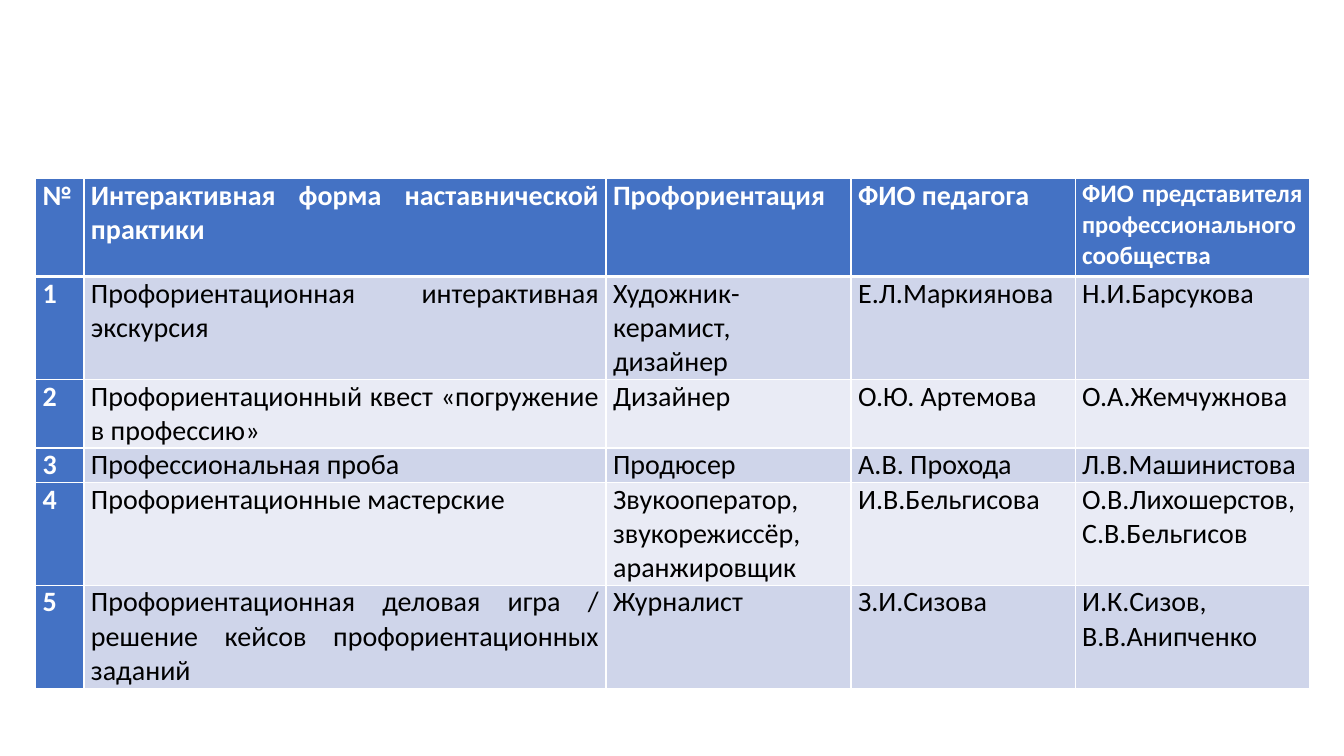
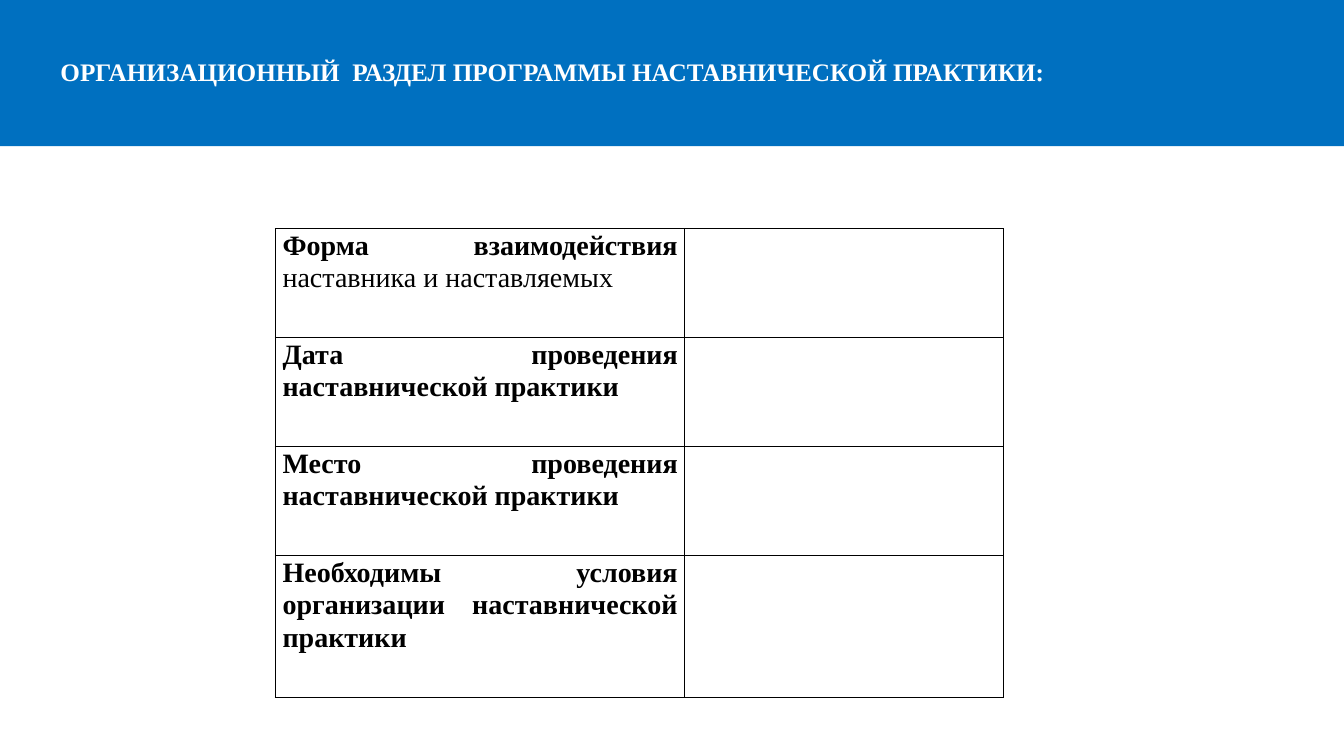
import dataclasses
import typing

import pptx
import pptx.dml.color
import pptx.enum.shapes
import pptx.enum.text
import pptx.oxml
import pptx.oxml.ns
import pptx.util

ALIGN = pptx.enum.text.PP_ALIGN
ANCHOR = pptx.enum.text.MSO_ANCHOR


@dataclasses.dataclass(frozen=True)
class Theme:
    white: str = "FFFFFF"
    black: str = "000000"
    blue: str = "4472C4"
    band_blue: str = "0070C0"
    stripes: tuple[str, str] = ("CFD5EA", "E9EBF5")
    sans: str = "Calibri"
    serif: str = "Times New Roman"
    body: float = 20
    small: float = 18
    tight: float = 17.5
    rule: float = 1
    heavy_rule: float = 3


@dataclasses.dataclass(frozen=True)
class Run:
    """A piece of text; None means the format of its cell."""
    text: str
    size: float | None = None
    bold: bool | None = None


@dataclasses.dataclass(frozen=True)
class Grid:
    """A table's place, in percent of the slide's width and height."""
    left: float
    top: float
    cols: tuple[float, ...]
    rows: tuple[float, ...]


# A cell holds lines of text, each a string or a tuple of runs
Line = str | tuple[Run, ...]
Cell = tuple[Line, ...]

THEME = Theme()
WIDTH = pptx.util.Inches(13.33)
HEIGHT = pptx.util.Inches(7.5)


def across(percent: float) -> int:
    return round(WIDTH * percent / 100)


def down(percent: float) -> int:
    return round(HEIGHT * percent / 100)


def rgb(color: str) -> pptx.dml.color.RGBColor:
    return pptx.dml.color.RGBColor.from_string(color)


def write(tf: typing.Any, lines: Cell, *, font: str, color: str, size: float,
          bold: bool = False, align: typing.Any = ALIGN.LEFT,
          spacing: float = 1.0, after: float = 0) -> None:
    for i, line in enumerate(lines):
        p = tf.add_paragraph() if i else tf.paragraphs[0]
        p.alignment, p.line_spacing = align, spacing
        p.space_after = pptx.util.Pt(after)
        for run in (Run(line),) if isinstance(line, str) else line:
            r = p.add_run()
            r.text = run.text
            r.font.name = font
            r.font.size = pptx.util.Pt(run.size or size)
            r.font.bold = bold if run.bold is None else run.bold
            r.font.color.rgb = rgb(color)


def set_borders(cell: typing.Any, color: str, top: float, bottom: float) -> None:
    sides = {"L": THEME.rule, "R": THEME.rule, "T": top, "B": bottom}
    props = cell._tc.get_or_add_tcPr()
    for i, (side, width) in enumerate(sides.items()):
        props.insert(i, pptx.oxml.parse_xml(
            f'<a:ln{side} {pptx.oxml.ns.nsdecls("a")} w="{pptx.util.Pt(width)}">'
            f'<a:solidFill><a:srgbClr val="{color}"/></a:solidFill></a:ln{side}>'))


def add_grid(s: typing.Any, grid: Grid) -> typing.Any:
    """Add an unstyled table with the grid's columns and rows."""
    table = s.shapes.add_table(
        len(grid.rows), len(grid.cols), across(grid.left), down(grid.top),
        across(sum(grid.cols)), down(sum(grid.rows))).table
    table.first_row = table.horz_banding = False
    for column, share in zip(table.columns, grid.cols):
        column.width = across(share)
    for row, share in zip(table.rows, grid.rows):
        row.height = down(share)
    return table


def fill_cell(cell: typing.Any, lines: Cell, *, fill: str | None, border: str,
              top: float = THEME.rule, bottom: float = THEME.rule,
              **text_format: typing.Any) -> None:
    cell.margin_left = cell.margin_right = pptx.util.Inches(0.07)
    cell.margin_top = cell.margin_bottom = 0
    if fill:
        cell.fill.solid()
        cell.fill.fore_color.rgb = rgb(fill)
    else:
        cell.fill.background()
    set_borders(cell, border, top, bottom)
    write(cell.text_frame, lines, align=ALIGN.JUSTIFY, size=THEME.body, **text_format)


def add_title_band(s: typing.Any, text: str) -> None:
    sp = s.shapes.add_shape(pptx.enum.shapes.MSO_SHAPE.RECTANGLE,
                            0, 0, WIDTH, down(19.33))
    sp.shadow.inherit = False
    sp.fill.solid()
    sp.fill.fore_color.rgb = rgb(THEME.band_blue)
    sp.line.fill.background()
    tf = sp.text_frame
    tf.word_wrap = True
    tf.vertical_anchor = ANCHOR.MIDDLE
    tf.margin_left = across(4.5)
    write(tf, (text,), font=THEME.serif, color=THEME.white, size=THEME.small,
          bold=True, spacing=0.9)


# Slide 1: forms of mentoring practice
PRACTICE_GRID = Grid(2.65, 23.65, (3.6, 38.85, 18.23, 16.67, 17.45),
                     (12.93, 13.6, 9.07, 4.53, 13.6, 13.6))
PRACTICE_HEADER: tuple[Cell, ...] = (
    ("№",),
    ("Интерактивная форма наставнической практики",),
    ("Профориентация",),
    ("ФИО педагога",),
    ((Run("ФИО представителя ", THEME.small),
      Run("профессионального", THEME.tight),
      Run(" сообщества", THEME.small)),),
)
PRACTICES: tuple[tuple[Cell, ...], ...] = (
    (("Профориентационная интерактивная экскурсия",),
     ("Художник-керамист, дизайнер",), ("Е.Л.Маркиянова",), ("Н.И.Барсукова",)),
    (("Профориентационный квест «погружение в профессию»",),
     ("Дизайнер",), ("О.Ю. Артемова",), ("О.А.Жемчужнова",)),
    (("Профессиональная проба",),
     ("Продюсер",), ("А.В. Прохода",), ("Л.В.Машинистова",)),
    (("Профориентационные мастерские",),
     ("Звукооператор, звукорежиссёр, аранжировщик",), ("И.В.Бельгисова",),
     ("О.В.Лихошерстов,", "С.В.Бельгисов")),
    (("Профориентационная деловая игра / решение кейсов "
      "профориентационных заданий",),
     ("Журналист",), ("З.И.Сизова",), ("И.К.Сизов, В.В.Анипченко",)),
)


def build_practices(s: typing.Any) -> None:
    table = add_grid(s, PRACTICE_GRID)
    numbered = [((str(n),), *row) for n, row in enumerate(PRACTICES, 1)]
    for i, row in enumerate([PRACTICE_HEADER, *numbered]):
        for j, lines in enumerate(row):
            heading = i == 0 or j == 0
            fill_cell(table.cell(i, j), lines,
                      fill=THEME.blue if heading else THEME.stripes[(i - 1) % 2],
                      border=THEME.white,
                      top=THEME.heavy_rule if i == 1 else THEME.rule,
                      bottom=THEME.heavy_rule if i == 0 else THEME.rule,
                      font=THEME.sans, bold=heading,
                      color=THEME.white if heading else THEME.black)


# Slide 2: organisational section, with an empty column to fill in
SECTION_TITLE = "ОРГАНИЗАЦИОННЫЙ  РАЗДЕЛ ПРОГРАММЫ НАСТАВНИЧЕСКОЙ ПРАКТИКИ:"
SECTION_GRID = Grid(20.5, 30.25, (30.45, 23.7), (14.42, 14.42, 14.42, 18.8))
SECTION_ITEMS: tuple[Line, ...] = (
    (Run("Форма взаимодействия "), Run("наставника и наставляемых", bold=False)),
    "Дата проведения наставнической практики",
    "Место проведения наставнической практики",
    "Необходимы условия организации наставнической практики",
)


def build_section(s: typing.Any) -> None:
    add_title_band(s, SECTION_TITLE)
    table = add_grid(s, SECTION_GRID)
    for i, item in enumerate(SECTION_ITEMS):
        for j, lines in enumerate(((item,), ())):
            fill_cell(table.cell(i, j), lines, fill=None, border=THEME.black,
                      font=THEME.serif, color=THEME.black, bold=True,
                      spacing=1.05, after=8)


def main() -> None:
    prs = pptx.Presentation()
    prs.slide_width, prs.slide_height = WIDTH, HEIGHT
    for build in (build_practices, build_section):
        build(prs.slides.add_slide(prs.slide_layouts[6]))
    prs.save("out.pptx")


if __name__ == "__main__":
    main()
